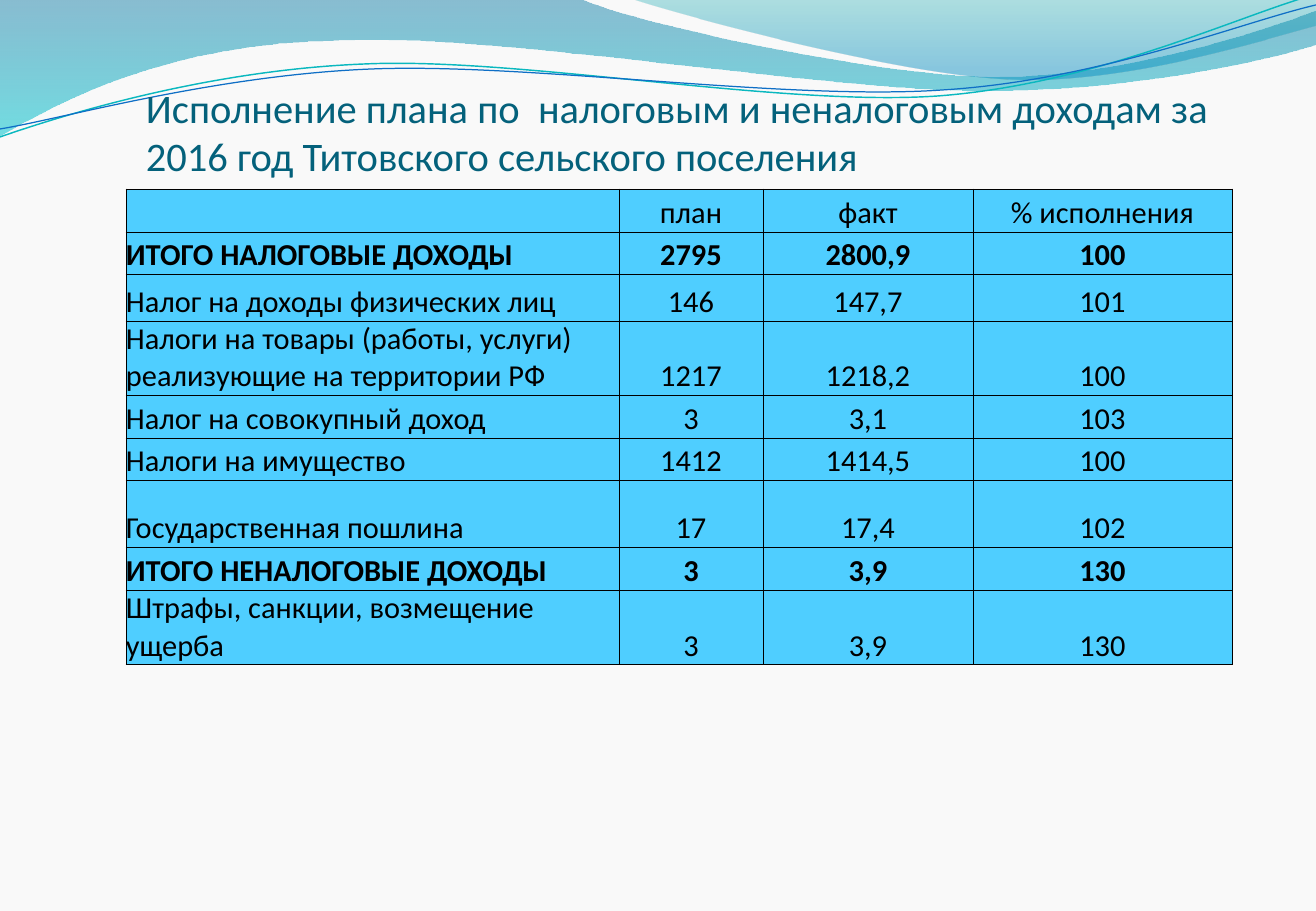
import math
import pptx
import pptx.util
import pptx.dml.color
import pptx.enum.text
import pptx.oxml
import pptx.oxml.ns

PX = 914400 / 121.5
THEME = {
    "font": "Calibri", "title": "04617B", "text": "000000", "cell": "4FCEFF",
    "back": "F9F9F9", "head_pt": 24, "body_pt": 18, "rule_pt": 0.5,
}
ALIGN = pptx.enum.text.PP_ALIGN
ANCHOR = pptx.enum.text.MSO_ANCHOR
rgb = pptx.dml.color.RGBColor.from_string
qn = pptx.oxml.ns.qn
NS = pptx.oxml.ns.nsdecls("a")


def px(n):
    return pptx.util.Emu(round(n * PX))


def draw(box, turn, start, parts, close):
    """Add an outline of lines (2 numbers) and cubic curves (6 numbers), in a box turned by degrees."""
    left, top, width, height = box
    pen = shapes.build_freeform(px(start[0]), px(start[1]), scale=1.0)
    pen.add_line_segments([(px(p[-2]), px(p[-1])) for p in parts], close=close)
    shape = pen.convert_to_shape()
    for name, value in zip(("left", "top", "width", "height"), box):
        setattr(shape, name, px(value))
    shape.rotation = turn
    shape.shadow.inherit = False
    cos, sin = math.cos(math.radians(-turn)), math.sin(math.radians(-turn))
    route = next(shape.element.iter(qn("a:path")))
    route.set("w", str(px(width)))
    route.set("h", str(px(height)))
    for node, part in zip(list(route), [start] + parts):
        tag = "cubicBezTo" if len(part) == 6 else "lnTo" if node.tag == qn("a:lnTo") else "moveTo"
        marks = ""
        for x, y in zip(part[::2], part[1::2]):
            dx, dy = x - left - width / 2, y - top - height / 2
            marks += (f'<a:pt x="{px(width / 2 + dx * cos - dy * sin)}"'
                      f' y="{px(height / 2 + dx * sin + dy * cos)}"/>')
        route.replace(node, pptx.oxml.parse_xml(f"<a:{tag} {NS}>{marks}</a:{tag}>"))
    return shape


deck = pptx.Presentation()
deck.slide_width, deck.slide_height = px(1316), px(911)
slide = deck.slides.add_slide(deck.slide_layouts[5])
shapes = slide.shapes
slide.background.fill.solid()
slide.background.fill.fore_color.rgb = rgb(THEME["back"])

# Wave bands: box, start, parts, gradient stops (place, colour, opacity %)
waves = [
    ((-1, -1, 1319, 138), (0, -1),
     [(580, -1), (626, 21, 874, 77, 999, 77), (1121, 77, 1261, 32, 1316, 11),
      (1318, 44), (1294, 53, 1145, 92, 982, 91), (819, 91, 503, 34, 339, 41),
      (170, 43, 61, 101, -1, 137), (0, -1)],
     [(0, "0074A1", 45), (1, "00C6CF", 55)]),
    ((631, -1, 685, 85), (631, -1),
     [(671, 13, 898, 75, 1012, 79), (1126, 84, 1266, 39, 1316, 26),
      (1316, 0), (631, -1)],
     [(0, "00A1A9", 30), (0.8, "008BBF", 45)]),
]
for box, start, parts, stops in waves:
    wave = draw(box, 0, start, parts, True)
    wave.line.fill.background()
    wave.fill.gradient()
    wave.fill.gradient_angle = 270
    for stop, (place, color, alpha) in zip(wave.fill.gradient_stops, stops):
        stop.position = place
        stop.color.rgb = rgb(color)
    for node, (place, color, alpha) in zip(wave.element.iter(qn("a:srgbClr")), stops):
        node.append(pptx.oxml.parse_xml(f'<a:alpha {NS} val="{alpha * 1000}"/>'))

# Thin curves: box, start, parts, colour, width
curves = [
    ((-2, 27, 1319, 86), (0, 137),
     [(63, 115, 208, 70, 365, 64), (520, 57, 780, 107, 938, 96),
      (1096, 84, 1236, 17, 1313, -5)], "0AB8BF", 0.85),
    ((-2, 36, 1321, 70), (0, 129),
     [(62, 119, 215, 75, 373, 69), (530, 63, 786, 101, 943, 90),
      (1101, 80, 1239, 23, 1316, 5)], "0F6FC6", 0.75),
]
for box, start, parts, color, width in curves:
    curve = draw(box, 357.3, start, parts, False)
    curve.fill.background()
    curve.line.color.rgb = rgb(color)
    curve.line.width = pptx.util.Pt(width)

# Title, in front of the waves
title = shapes.title
shapes.element.append(title.element)
for name, value in {"left": 146, "top": 0, "width": 1104, "height": 180}.items():
    setattr(title, name, px(value))
frame = title.text_frame
frame.text = "Исполнение плана по  налоговым и неналоговым доходам за 2016 год Титовского сельского поселения"
look = {"margin_left": 0, "margin_top": px(6), "margin_right": 0, "margin_bottom": 0,
        "word_wrap": True, "vertical_anchor": ANCHOR.BOTTOM,
        "auto_size": pptx.enum.text.MSO_AUTO_SIZE.NONE}
for name, value in look.items():
    setattr(frame, name, value)
line = frame.paragraphs[0]
line.alignment = ALIGN.LEFT
for name, value in {"name": THEME["font"], "size": pptx.util.Pt(THEME["head_pt"])}.items():
    setattr(line.runs[0].font, name, value)
line.runs[0].font.color.rgb = rgb(THEME["title"])

# Income table
rows = [
    ("", "план", "факт", "% исполнения"),
    ("ИТОГО НАЛОГОВЫЕ ДОХОДЫ", "2795", "2800,9", "100"),
    ("Налог на доходы физических лиц", "146", "147,7", "101"),
    ("Налоги на товары (работы, услуги) реализующие на территории РФ", "1217", "1218,2", "100"),
    ("Налог на совокупный доход", "3", "3,1", "103"),
    ("Налоги на имущество", "1412", "1414,5", "100"),
    ("Государственная пошлина", "17", "17,4", "102"),
    ("ИТОГО НЕНАЛОГОВЫЕ ДОХОДЫ", "3", "3,9", "130"),
    ("Штрафы, санкции, возмещение ущерба", "3", "3,9", "130"),
]
widths = [493, 144, 210, 259]
heights = [43, 42, 47, 67, 43, 42, 67, 43, 42]
holder = shapes.add_table(len(rows), len(widths), px(126), px(189), px(sum(widths)), px(473))
table = holder.table
table.first_row = table.horz_banding = False
for column, width in zip(table.columns, widths):
    column.width = px(width)
for row, height in zip(table.rows, heights):
    row.height = px(height)
holder.height = px(473)

inset = {"margin_left": 0, "margin_top": 0, "margin_right": 0, "margin_bottom": 0,
         "vertical_anchor": ANCHOR.BOTTOM}
for r, texts in enumerate(rows):
    for c, text in enumerate(texts):
        cell = table.cell(r, c)
        cell.text = text
        for name, value in inset.items():
            setattr(cell, name, value)
        for side in "LRTB":
            cell._tc.get_or_add_tcPr().append(pptx.oxml.parse_xml(
                f'<a:ln{side} {NS} w="{pptx.util.Pt(THEME["rule_pt"])}">'
                f'<a:solidFill><a:srgbClr val="{THEME["text"]}"/></a:solidFill></a:ln{side}>'))
        cell.fill.solid()
        cell.fill.fore_color.rgb = rgb(THEME["cell"])
        line = cell.text_frame.paragraphs[0]
        line.alignment = ALIGN.CENTER if c else ALIGN.LEFT
        face = {"name": THEME["font"], "size": pptx.util.Pt(THEME["body_pt"]),
                "bold": texts[0].startswith("ИТОГО")}
        for run in line.runs:
            for name, value in face.items():
                setattr(run.font, name, value)
            run.font.color.rgb = rgb(THEME["text"])

deck.save("out.pptx")
